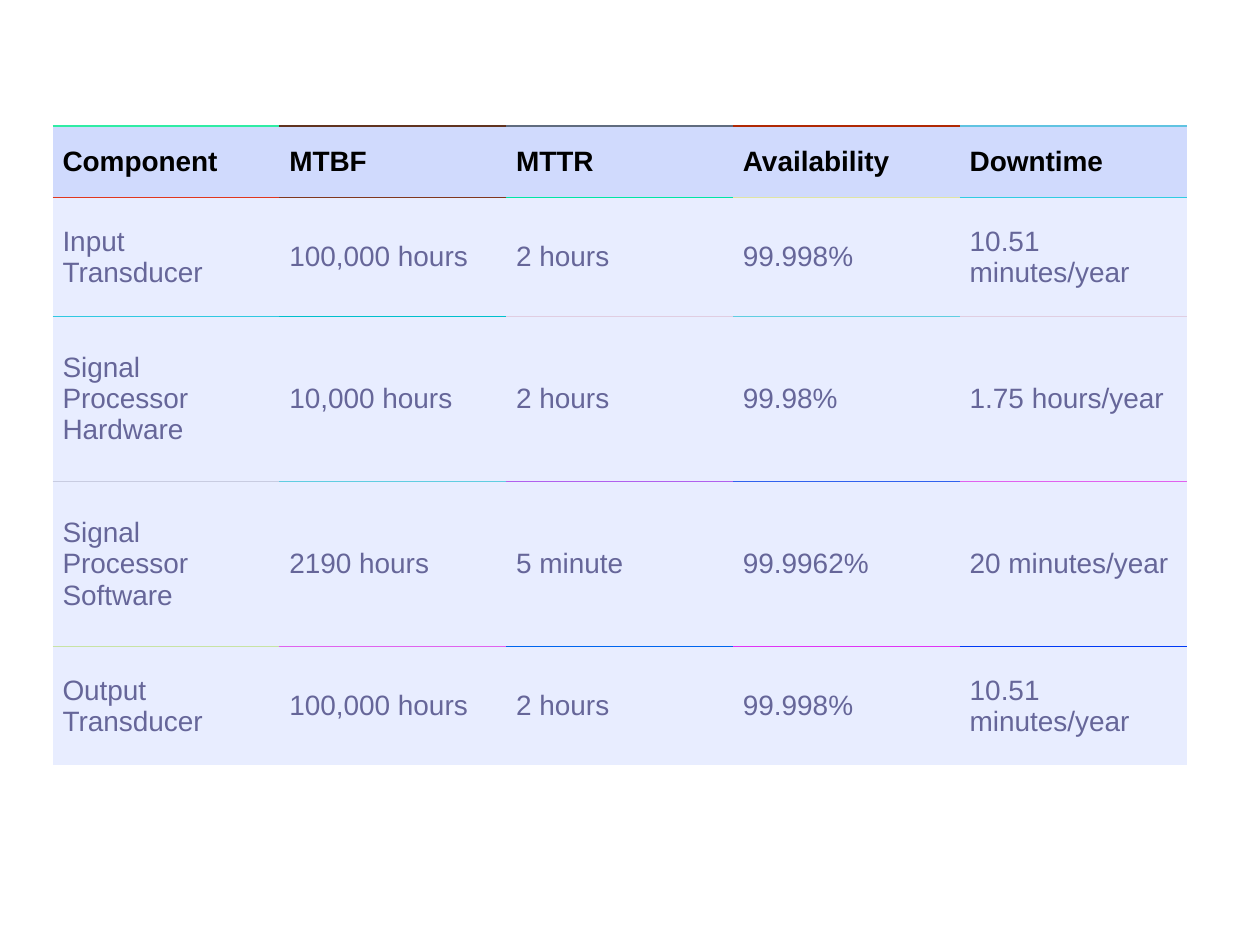
from typing import NamedTuple

from lxml import etree
from pptx import Presentation
from pptx.dml.color import RGBColor
from pptx.enum.text import MSO_ANCHOR
from pptx.oxml.ns import qn
from pptx.table import Table, _Cell
from pptx.util import Cm, Pt

MIDDLE = MSO_ANCHOR.MIDDLE
HUES = {"head": "D0DAFD", "body": "E8EDFF", "title": "000000", "text": "666699"}
RULES = [
    ["30ECA4", "60331F", "606C7F", "B02904", "60C3E1"],
    ["E0371F", "80381F", "00E6A4", "E0E4A4", "30CCE1"],
    ["30C9E1", "00C0CC", "E0CDE1", "60CEE1", "E0CEE1"],
    ["C8CCE1", "60CDE1", "B060EE", "3061EE", "E061EE"],
    ["C8E3A4", "E063EE", "0065EE", "E034F5", "0039F5"],
    ["FFFFFF"] * 5,
]
INSET = Cm(0.2)
CELL = {
    "vertical_anchor": MIDDLE,
    "margin_left": INSET,
    "margin_right": INSET,
    "margin_top": INSET,
    "margin_bottom": INSET,
}
FONT = {"name": "Arial", "size": Pt(16)}
PLAIN = {"first_row": False, "horz_banding": False}


class Row(NamedTuple):
    high: float
    texts: list[str]
    fill: str = "body"
    ink: str = "text"
    bold: bool = False


ROWS = [
    Row(1.45, ["Component", "MTBF", "MTTR", "Availability", "Downtime"],
        "head", "title", True),
    Row(2.39, ["Input Transducer", "100,000 hours", "2 hours", "99.998%",
               "10.51 minutes/year"]),
    Row(3.33, ["Signal Processor Hardware", "10,000 hours", "2 hours", "99.98%",
               "1.75 hours/year"]),
    Row(3.33, ["Signal Processor Software", "2190 hours", "5 minute", "99.9962%",
               "20 minutes/year"]),
    Row(2.39, ["Output Transducer", "100,000 hours", "2 hours", "99.998%",
               "10.51 minutes/year"]),
]


def apply(item: object, values: dict) -> None:
    for key, value in values.items():
        setattr(item, key, value)


def edge(cell: _Cell, side: str, hue: str = "") -> None:
    line = etree.SubElement(cell._tc.get_or_add_tcPr(), qn(f"a:ln{side}"),
                            w=str(Pt(0.75)))
    if hue:
        fill = etree.SubElement(line, qn("a:solidFill"))
        etree.SubElement(fill, qn("a:srgbClr"), val=hue)
    else:
        etree.SubElement(line, qn("a:noFill"))


def draw(table: Table, at: int, row: Row) -> None:
    table.rows[at].height = Cm(row.high)
    for col, text in enumerate(row.texts):
        cell = table.cell(at, col)
        apply(cell, CELL)
        edge(cell, "L")
        edge(cell, "R")
        edge(cell, "T", RULES[at][col])
        edge(cell, "B", RULES[at + 1][col])
        cell.fill.solid()
        cell.fill.fore_color.rgb = RGBColor.from_string(HUES[row.fill])
        run = cell.text_frame.paragraphs[0].add_run()
        run.text = text
        apply(run.font, FONT | {"bold": row.bold})
        run.font.color.rgb = RGBColor.from_string(HUES[row.ink])


def main() -> None:
    deck = Presentation()
    apply(deck, {"slide_width": Cm(25.4), "slide_height": Cm(19.05)})
    slide = deck.slides.add_slide(deck.slide_layouts[6])
    high = sum(row.high for row in ROWS)
    table = slide.shapes.add_table(len(ROWS), len(ROWS[0].texts), Cm(1.06),
                                   Cm(2.54), Cm(22.86), Cm(high)).table
    apply(table, PLAIN)
    for at, row in enumerate(ROWS):
        draw(table, at, row)
    deck.save("out.pptx")


if __name__ == "__main__":
    main()
